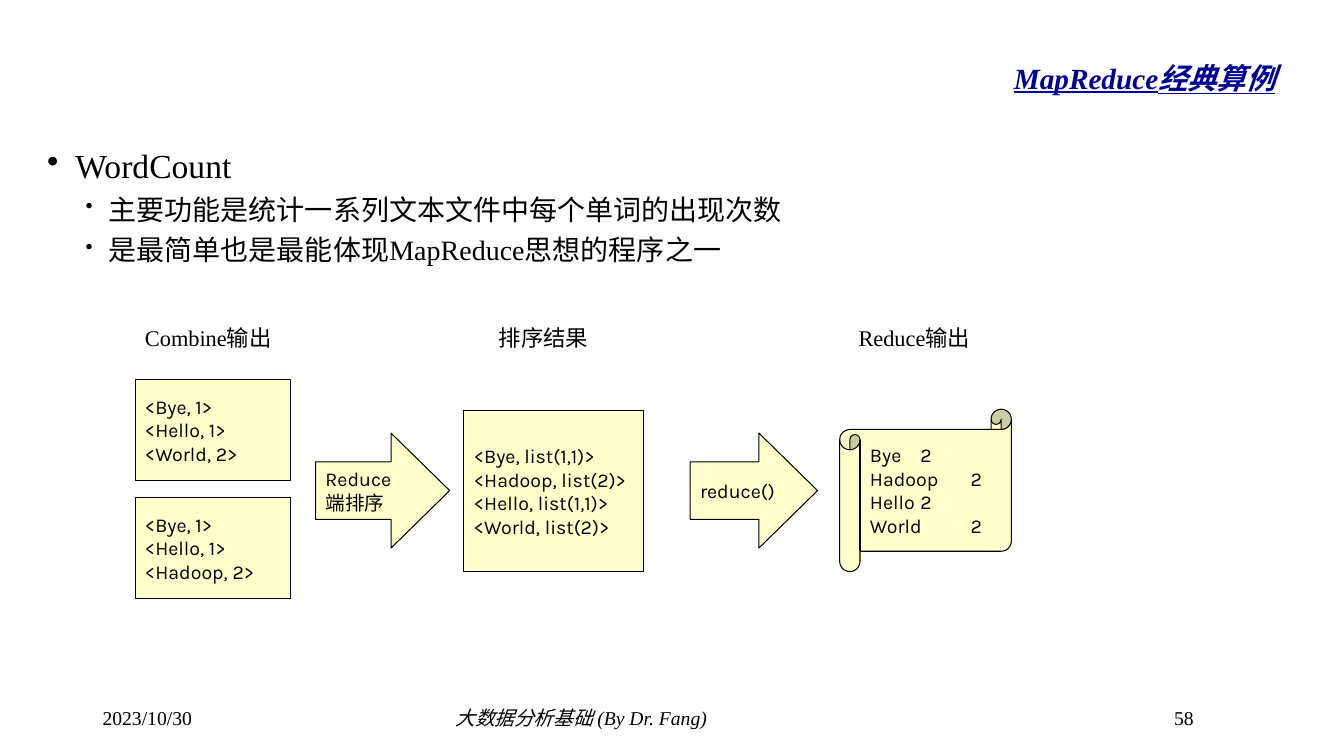
from dataclasses import dataclass

from lxml.etree import SubElement
from pptx import Presentation
from pptx.dml.color import RGBColor
from pptx.enum.shapes import MSO_SHAPE
from pptx.enum.text import MSO_ANCHOR, PP_ALIGN
from pptx.oxml.ns import qn
from pptx.util import Pt


@dataclass(frozen=True)
class Theme:
    """Colours, fonts and type sizes of the slide."""

    ink: RGBColor = RGBColor(0x00, 0x00, 0x00)
    heading: RGBColor = RGBColor(0x00, 0x00, 0x99)
    panel: RGBColor = RGBColor(0xFF, 0xFF, 0xCC)
    serif: str = "Times New Roman"
    sans: str = "Karla"
    title_size: int = 36
    topic_size: int = 24
    point_size: int = 20
    label_size: int = 16
    small_size: int = 14
    outline: float = 0.75


class SlideBuilder:
    """Draws themed elements on one slide, with lengths in points."""

    def __init__(self, slide, theme):
        """Keep the slide and its theme."""
        self.slide = slide
        self.theme = theme

    def style(self, paragraph, size, font, color=None, italic=False):
        """Format every run of a paragraph."""
        for run in paragraph.runs:
            run.font.size = Pt(size)
            run.font.name = font
            run.font.italic = italic
            run.font.color.rgb = color or self.theme.ink

    def text(self, left, top, width, height, words, size, color=None, italic=False):
        """Add a wrapped text box in the serif font and return its frame."""
        box = self.slide.shapes.add_textbox(Pt(left), Pt(top), Pt(width), Pt(height))
        frame = box.text_frame
        frame.word_wrap = True
        frame.text = words
        for paragraph in frame.paragraphs:
            self.style(paragraph, size, self.theme.serif, color, italic)
        return frame

    def title(self, left, top, width, height, words):
        """Add the right-aligned, underlined and lowered heading."""
        frame = self.text(left, top, width, height, words,
                          self.theme.title_size, self.theme.heading, True)
        frame.vertical_anchor = MSO_ANCHOR.MIDDLE
        heading = frame.paragraphs[0]
        heading.alignment = PP_ALIGN.RIGHT
        for run in heading.runs:
            run.font.bold = True
            run.font.underline = True
            run._r.get_or_add_rPr().set("baseline", "-25000")

    def outline(self, left, top, width, height, topic, points):
        """Add a bulleted topic with its second-level points."""
        frame = self.text(left, top, width, height, "\n".join([topic, *points]),
                          self.theme.point_size)
        for paragraph in frame.paragraphs:
            self.bullet(paragraph, 44, 16.5, 75)
            paragraph.level = 1
        first = frame.paragraphs[0]
        first.level = 0
        self.bullet(first, 20.25, 20.25, 100)
        self.style(first, self.theme.topic_size, self.theme.serif)

    def bullet(self, paragraph, margin, hanging, percent):
        """Give a paragraph a hanging bullet and wide line spacing."""
        paragraph.line_spacing = 1.2
        properties = paragraph._p.get_or_add_pPr()
        properties.set("marL", str(Pt(margin)))
        properties.set("indent", str(-Pt(hanging)))
        for tag in ("a:buSzPct", "a:buChar"):
            for stale in properties.findall(qn(tag)):
                properties.remove(stale)
        SubElement(properties, qn("a:buSzPct")).set("val", str(percent * 1000))
        SubElement(properties, qn("a:buChar")).set("char", "•")

    def panel(self, kind, left, top, width, height, lines, adjustments=()):
        """Add a filled, outlined shape holding lines of data."""
        shape = self.slide.shapes.add_shape(kind, Pt(left), Pt(top), Pt(width), Pt(height))
        shape.shadow.inherit = False
        shape.fill.solid()
        shape.fill.fore_color.rgb = self.theme.panel
        shape.line.color.rgb = self.theme.ink
        shape.line.width = Pt(self.theme.outline)
        for index, value in enumerate(adjustments):
            shape.adjustments[index] = value
        frame = shape.text_frame
        frame.word_wrap = True
        frame.vertical_anchor = MSO_ANCHOR.MIDDLE
        frame.text = "\n".join(lines)
        for paragraph in frame.paragraphs:
            paragraph.alignment = PP_ALIGN.LEFT
            self.style(paragraph, self.theme.small_size, self.theme.sans)


def main():
    """Build the WordCount slide and save it."""
    deck = Presentation()
    deck.slide_width, deck.slide_height = Pt(960), Pt(540)
    theme = Theme()
    page = SlideBuilder(deck.slides.add_slide(deck.slide_layouts[6]), theme)

    page.title(139.7, 3.6, 778.3, 79.2, "MapReduce经典算例")
    page.outline(26.6, 94.3, 907.2, 402.5, "WordCount", [
        "主要功能是统计一系列文本文件中每个单词的出现次数",
        "是最简单也是最能体现MapReduce思想的程序之一",
    ])

    for left, stage in ((96.5, "Combine输出"), (349.2, "排序结果"), (606.2, "Reduce输出")):
        page.text(left, 228.2, 110.9, 26.6, stage, theme.label_size)

    combined = (("<Bye, 1>", "<Hello, 1>", "<World, 2>"),
                ("<Bye, 1>", "<Hello, 1>", "<Hadoop, 2>"))
    for row, pairs in enumerate(combined):
        page.panel(MSO_SHAPE.RECTANGLE, 96.5, 271.2 + row * 84.3, 110.9, 72, pairs)

    page.panel(MSO_SHAPE.RECTANGLE, 331.4, 293.2, 128.2, 115.2, [
        "<Bye, list(1,1)>", "<Hadoop, list(2)>", "<Hello, list(1,1)>", "<World, list(2)>"])

    for left, width, step in ((225.4, 95.8, "Reduce端排序"), (493, 91, "reduce()")):
        page.panel(MSO_SHAPE.RIGHT_ARROW, left, 309.4, width, 82.1, [step], (0.5, 0.51))

    counts = [f"{word}\t2" for word in ("Bye", "Hadoop", "Hello", "World")]
    page.panel(MSO_SHAPE.HORIZONTAL_SCROLL, 599.8, 292.3, 122.6, 116, counts)

    footer = ((66.2, 216, "2023/10/30", False),
              (318.2, 462.2, "大数据分析基础 (By Dr. Fang)", True),
              (831.6, 62.6, "58", False))
    for left, width, words, italic in footer:
        page.text(left, 500.4, width, 28.8, words, theme.small_size, italic=italic)

    deck.save("out.pptx")


if __name__ == "__main__":
    main()
